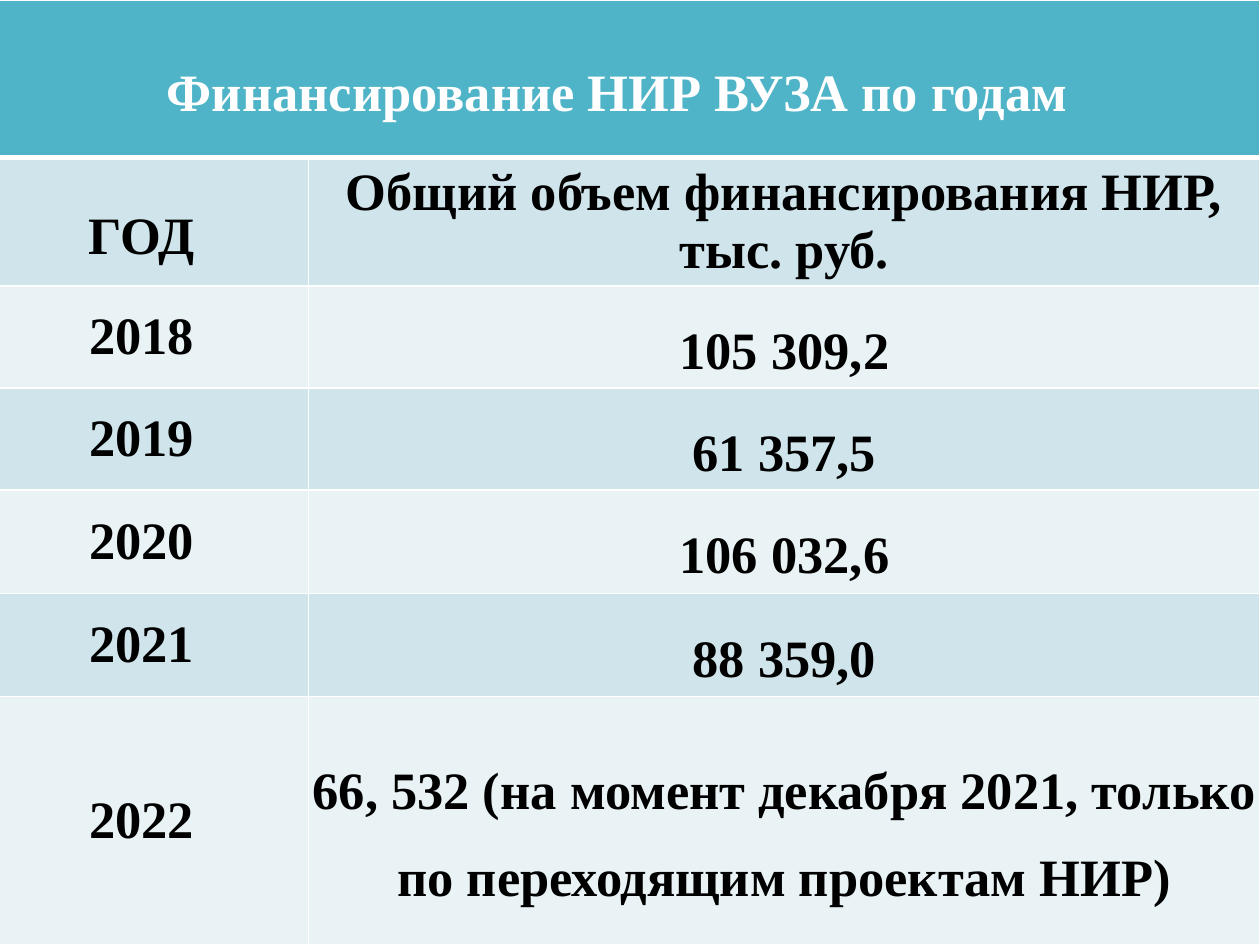
from lxml.etree import SubElement
from pptx import Presentation
from pptx.dml.color import RGBColor
from pptx.enum.text import MSO_ANCHOR, PP_ALIGN
from pptx.oxml.ns import qn
from pptx.util import Inches, Pt

WHITE = RGBColor(0xFF, 0xFF, 0xFF)
BLACK = RGBColor(0x00, 0x00, 0x00)
TEAL = RGBColor(0x50, 0xB4, 0xC8)
BAND_DARK = RGBColor(0xD0, 0xE5, 0xEB)
BAND_LIGHT = RGBColor(0xE9, 0xF2, 0xF5)
BACKGROUND = RGBColor(0xE0, 0xEF, 0xF2)

HEADING = "Финансирование НИР ВУЗА по годам"
FUNDING = [
    ("ГОД", "Общий объем финансирования НИР, тыс. руб."),
    ("2018", "105 309,2"),
    ("2019", "61 357,5"),
    ("2020", "106 032,6"),
    ("2021", "88 359,0"),
    ("2022", "66, 532 (на момент декабря 2021, только по переходящим проектам НИР)"),
]
COLUMN_WIDTHS = [2.65, 7.55]
ROW_HEIGHTS = [1.25, 1.02, 0.81, 0.81, 0.82, 0.82, 1.97]


class SlideBuilder:
    font_format = {"name": "Times New Roman", "size": Pt(30), "bold": True}
    cell_format = {
        "margin_left": 0,
        "margin_right": 0,
        "margin_top": 0,
        "margin_bottom": 0,
        "vertical_anchor": MSO_ANCHOR.MIDDLE,
    }

    def __init__(self, slide):
        self.slide = slide

    def apply(self, target, values):
        for name, value in values.items():
            setattr(target, name, value)

    def background(self, color):
        fill = self.slide.background.fill
        fill.solid()
        fill.fore_color.rgb = color

    def table(self, left, top, widths, heights):
        frame = self.slide.shapes.add_table(
            len(heights), len(widths), Inches(left), Inches(top),
            Inches(sum(widths)), Inches(sum(heights)))
        for column, width in zip(frame.table.columns, widths):
            column.width = Inches(width)
        for row, height in zip(frame.table.rows, heights):
            row.height = Inches(height)
        return frame.table

    def borders(self, cell, top, bottom):
        properties = cell._tc.get_or_add_tcPr()
        for side, points in {"L": 1, "R": 1, "T": top, "B": bottom}.items():
            line = SubElement(properties, qn(f"a:ln{side}"), w=str(Pt(points)))
            solid = SubElement(line, qn("a:solidFill"))
            SubElement(solid, qn("a:srgbClr"), val=str(WHITE))

    def cell(self, cell, fill, top=1, bottom=1):
        self.borders(cell, top, bottom)
        cell.fill.solid()
        cell.fill.fore_color.rgb = fill
        self.apply(cell, self.cell_format)

    def text(self, cell, wording, color, spacing):
        paragraph = cell.text_frame.paragraphs[0]
        self.apply(paragraph, {"alignment": PP_ALIGN.CENTER, "line_spacing": spacing})
        run = paragraph.add_run()
        run.text = wording
        self.apply(run.font, self.font_format)
        run.font.color.rgb = color


def main():
    presentation = Presentation()
    presentation.slide_width = Inches(10)
    presentation.slide_height = Inches(7.5)
    builder = SlideBuilder(presentation.slides.add_slide(presentation.slide_layouts[6]))
    builder.background(BACKGROUND)

    funding = builder.table(-0.2, 0, COLUMN_WIDTHS, ROW_HEIGHTS)
    heading = funding.cell(0, 0)
    heading.merge(funding.cell(0, 1))
    for column in range(len(COLUMN_WIDTHS)):
        builder.cell(funding.cell(0, column), TEAL, bottom=3)
    builder.text(heading, HEADING, WHITE, 1.5)

    for row, entries in enumerate(FUNDING, start=1):
        is_header = row == 1
        band = BAND_DARK if row % 2 else BAND_LIGHT
        for column, wording in enumerate(entries):
            cell = funding.cell(row, column)
            builder.cell(cell, band, top=3 if is_header else 1)
            is_spaced = is_header == (column == 0)
            builder.text(cell, wording, BLACK, 1.5 if is_spaced else 1.0)

    presentation.save("out.pptx")


if __name__ == "__main__":
    main()
